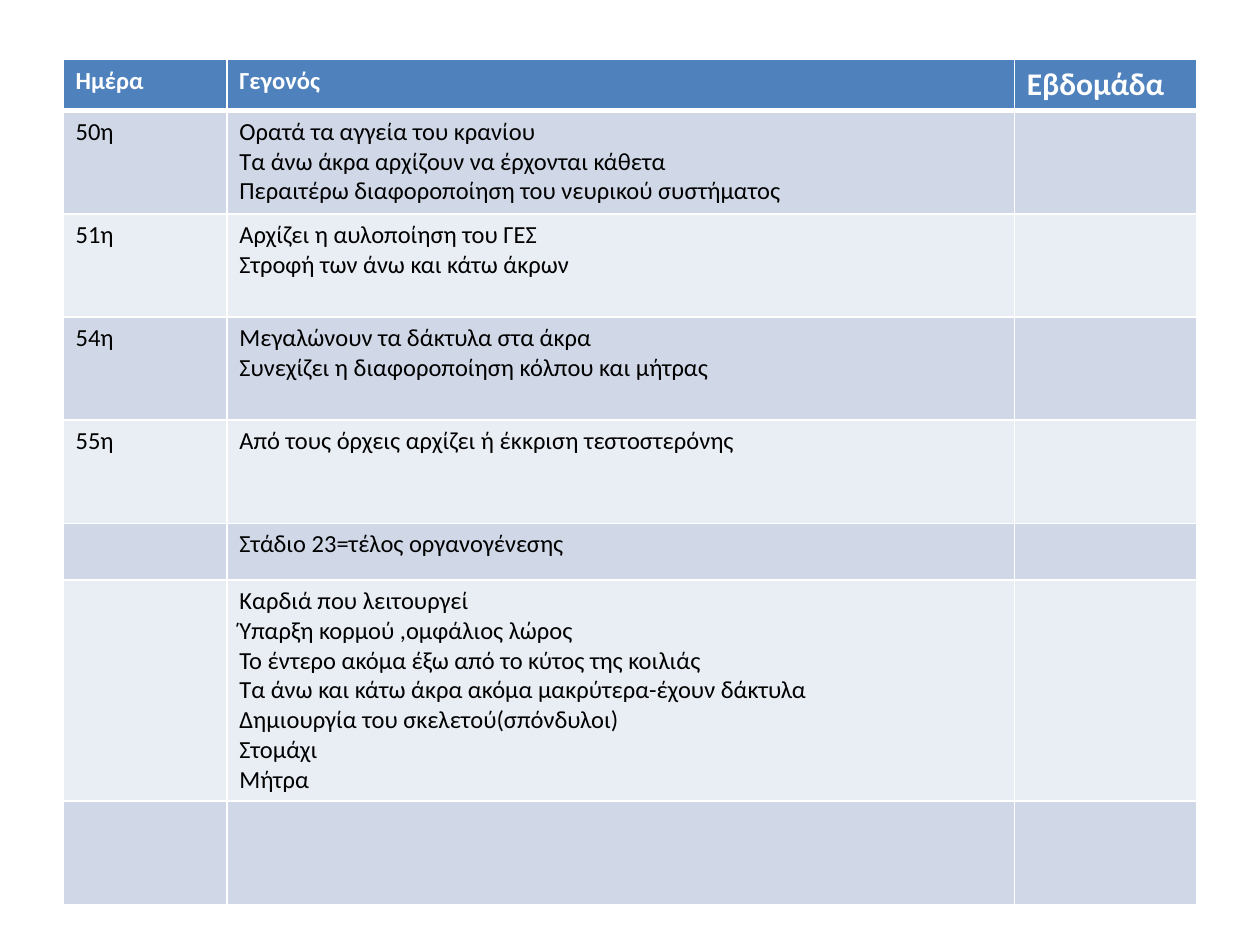
from lxml import etree
from pptx import Presentation
from pptx.dml.color import RGBColor
from pptx.oxml.ns import qn
from pptx.util import Cm, Pt

WHITE = RGBColor(0xFF, 0xFF, 0xFF)
BLACK = RGBColor(0x00, 0x00, 0x00)
HEADER_BLUE = RGBColor(0x4F, 0x81, 0xBD)
BAND_DARK = RGBColor(0xD0, 0xD8, 0xE8)
BAND_LIGHT = RGBColor(0xE9, 0xED, 0xF4)
BLANK_LAYOUT = 6

COLUMN_SHARES = (1.3, 6.25, 1.45)
HEADER_HEIGHT = 0.99
ROW_HEIGHT = 2.08
HEADINGS = (("Ημέρα", 14), ("Γεγονός", 14), ("Εβδομάδα", 18))
EVENTS = (
    ("50η", ("Ορατά τα αγγεία του κρανίου",
             "Τα άνω άκρα αρχίζουν να έρχονται κάθετα",
             "Περαιτέρω διαφοροποίηση του νευρικού συστήματος"), ROW_HEIGHT),
    ("51η", ("Αρχίζει η αυλοποίηση του ΓΕΣ",
             "Στροφή των άνω και κάτω άκρων"), ROW_HEIGHT),
    ("54η", ("Μεγαλώνουν τα δάκτυλα στα άκρα",
             "Συνεχίζει η διαφοροποίηση κόλπου και μήτρας"), ROW_HEIGHT),
    ("55η", ("Από τους όρχεις αρχίζει ή έκκριση τεστοστερόνης",), ROW_HEIGHT),
    ("", ("Στάδιο 23=τέλος οργανογένεσης",), 1.14),
    ("", ("Καρδιά που λειτουργεί",
          "Ύπαρξη κορμού ,ομφάλιος λώρος",
          "Το έντερο ακόμα έξω από το κύτος της κοιλιάς",
          "Τα άνω και κάτω άκρα ακόμα μακρύτερα-έχουν δάκτυλα",
          "Δημιουργία του σκελετού(σπόνδυλοι)",
          "Στομάχι",
          "Μήτρα"), 4.46),
    ("", (), ROW_HEIGHT),
)


def write_text(text_frame, text, size=14, color=BLACK, bold=False):
    text_frame.text = text
    for paragraph in text_frame.paragraphs:
        for run in paragraph.runs:
            run.font.name = "Calibri"
            run.font.size = Pt(size)
            run.font.bold = bold
            run.font.color.rgb = color


def set_borders(cell, **widths):
    properties = cell._tc.get_or_add_tcPr()
    for side in "LRTB":
        line = etree.SubElement(properties, qn(f"a:ln{side}"), w=str(Pt(widths.get(side, 1))))
        fill = etree.SubElement(line, qn("a:solidFill"))
        etree.SubElement(fill, qn("a:srgbClr"), val=str(WHITE))


def paint_cell(cell, color, **border_widths):
    set_borders(cell, **border_widths)
    cell.fill.solid()
    cell.fill.fore_color.rgb = color


def add_event_table(slide, left, top, width, height):
    frame = slide.shapes.add_table(len(EVENTS) + 1, len(HEADINGS), left, top, width, height)
    table = frame.table
    for column, share in zip(table.columns, COLUMN_SHARES):
        column.width = int(width * share / sum(COLUMN_SHARES))

    table.rows[0].height = Cm(HEADER_HEIGHT)
    for cell, (heading, size) in zip(table.rows[0].cells, HEADINGS):
        paint_cell(cell, HEADER_BLUE, B=3)
        write_text(cell.text_frame, heading, size=size, color=WHITE, bold=True)

    for index, (day, events, row_height) in enumerate(EVENTS, start=1):
        row = table.rows[index]
        row.height = Cm(row_height)
        for cell in row.cells:
            paint_cell(cell, BAND_DARK if index % 2 else BAND_LIGHT, T=3 if index == 1 else 1)
        for column, text in enumerate((day, "\n".join(events))):
            if text:
                write_text(table.cell(index, column).text_frame, text)


def main():
    presentation = Presentation()
    presentation.slide_width = Cm(25.4)
    presentation.slide_height = Cm(19.05)
    slide = presentation.slides.add_slide(presentation.slide_layouts[BLANK_LAYOUT])
    add_event_table(slide, Cm(1.27), Cm(1.2), Cm(22.86), Cm(17))
    presentation.save("out.pptx")


if __name__ == "__main__":
    main()
